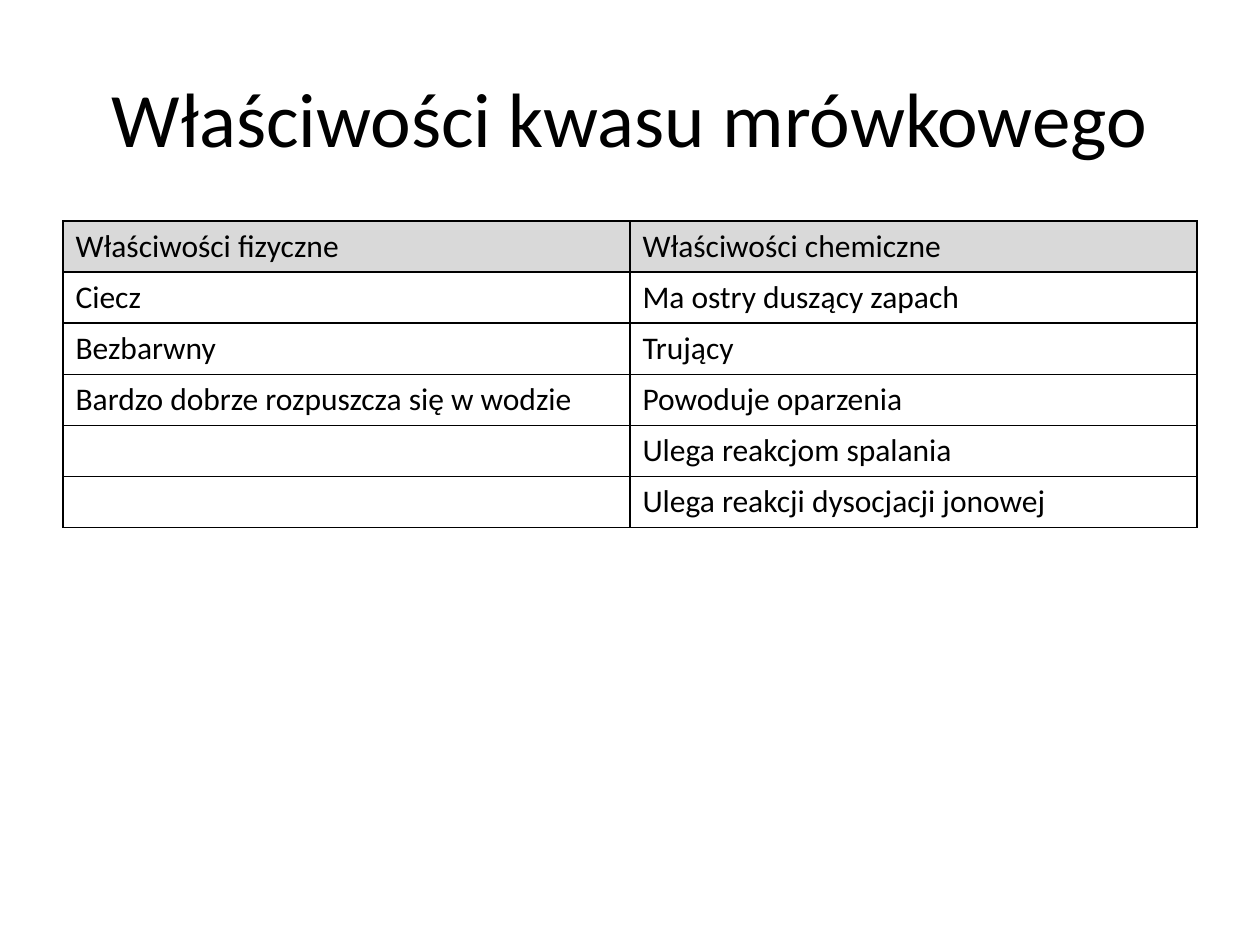
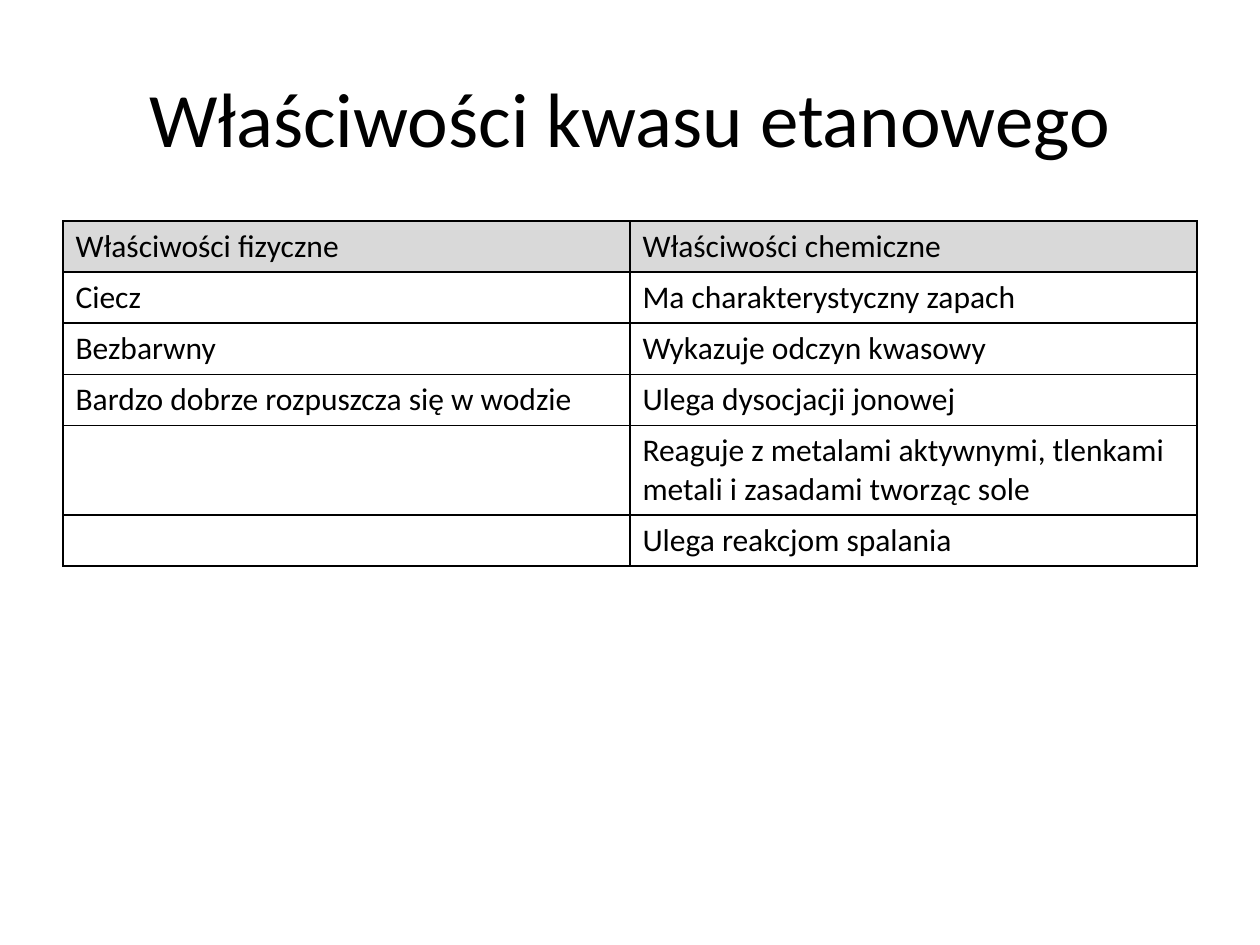
from dataclasses import dataclass
from itertools import zip_longest

from lxml.etree import SubElement
from pptx import Presentation
from pptx.dml.color import RGBColor as Rgb
from pptx.enum.text import MSO_ANCHOR as Anchor, PP_ALIGN as Align
from pptx.oxml.ns import qn
from pptx.util import Pt

PX = 914400 // 126


@dataclass(frozen=True)
class Theme:
    """Colours, type and line sizes shared by the slides."""
    font: str = "Calibri"
    ink: str = "000000"
    header: str = "D9D9D9"
    paper: str = "FFFFFF"
    title_size: int = 44
    cell_size: int = 18
    border: int = 1


@dataclass(frozen=True)
class Box:
    """A region measured in px."""
    left: int
    top: int
    width: int
    height: int

    def emu(self):
        """Return the position and size in EMU."""
        return [side * PX for side in (self.left, self.top, self.width, self.height)]


THEME = Theme()
SLIDE = Box(0, 0, 1260, 945)
HEADING = Box(63, 38, 1134, 158)
PROPERTIES = Box(63, 221, 1134, 306)

HEADERS = ("Właściwości fizyczne", "Właściwości chemiczne")
PHYSICAL = ("Ciecz", "Bezbarwny", "Bardzo dobrze rozpuszcza się w wodzie")
ACIDS = {
    "Właściwości kwasu mrówkowego": (
        "Ma ostry duszący zapach",
        "Trujący",
        "Powoduje oparzenia",
        "Ulega reakcjom spalania",
        "Ulega reakcji dysocjacji jonowej",
    ),
    "Właściwości kwasu etanowego": (
        "Ma charakterystyczny zapach",
        "Wykazuje odczyn kwasowy",
        "Ulega dysocjacji jonowej",
        "Reaguje z metalami aktywnymi, tlenkami metali i zasadami tworząc sole",
        "Ulega reakcjom spalania",
    ),
}


def apply(target, values):
    """Set each named attribute on the target."""
    for name, value in values.items():
        setattr(target, name, value)


def style_text(frame, size):
    """Give every run the theme font, colour and the given size."""
    for paragraph in frame.paragraphs:
        for run in paragraph.runs:
            apply(run.font, {"name": THEME.font, "size": Pt(size), "bold": False})
            run.font.color.rgb = Rgb.from_string(THEME.ink)


def add_heading(slide, box, wording):
    """Fill the title placeholder and place it in the box."""
    heading = slide.shapes.title
    apply(heading, dict(zip(("left", "top", "width", "height"), box.emu())))
    frame = heading.text_frame
    frame.text = wording
    apply(frame, {"vertical_anchor": Anchor.MIDDLE, "word_wrap": True})
    frame.paragraphs[0].alignment = Align.CENTER
    style_text(frame, THEME.title_size)


def outline(cell):
    """Draw a solid border on all four sides of a cell."""
    properties = cell._tc.get_or_add_tcPr()
    for side in ("a:lnL", "a:lnR", "a:lnT", "a:lnB"):
        line = SubElement(properties, qn(side), w=str(Pt(THEME.border)))
        SubElement(SubElement(line, qn("a:solidFill")), qn("a:srgbClr"), val=THEME.ink)


def fill_cell(cell, wording, colour):
    """Write one property and give its cell a border and a fill."""
    cell.text = wording
    style_text(cell.text_frame, THEME.cell_size)
    outline(cell)
    cell.fill.solid()
    cell.fill.fore_color.rgb = Rgb.from_string(colour)


def add_properties(slide, box, chemical):
    """Set physical and chemical properties side by side in the box."""
    rows = [HEADERS, *zip_longest(PHYSICAL, chemical, fillvalue="")]
    table = slide.shapes.add_table(len(rows), len(HEADERS), *box.emu()).table
    apply(table, {"first_row": False, "horz_banding": False})
    for row, wordings in enumerate(rows):
        colour = THEME.paper if row else THEME.header
        for column, wording in enumerate(wordings):
            fill_cell(table.cell(row, column), wording, colour)


def add_acid_slide(deck, acid, chemical):
    """Add a slide with the title and property table of one acid."""
    slide = deck.slides.add_slide(deck.slide_layouts.get_by_name("Title Only"))
    add_heading(slide, HEADING, acid)
    add_properties(slide, PROPERTIES, chemical)


def main():
    """Build and save the presentation."""
    deck = Presentation()
    apply(deck, {"slide_width": SLIDE.width * PX, "slide_height": SLIDE.height * PX})
    for acid, chemical in ACIDS.items():
        add_acid_slide(deck, acid, chemical)
    deck.save("out.pptx")


if __name__ == "__main__":
    main()
